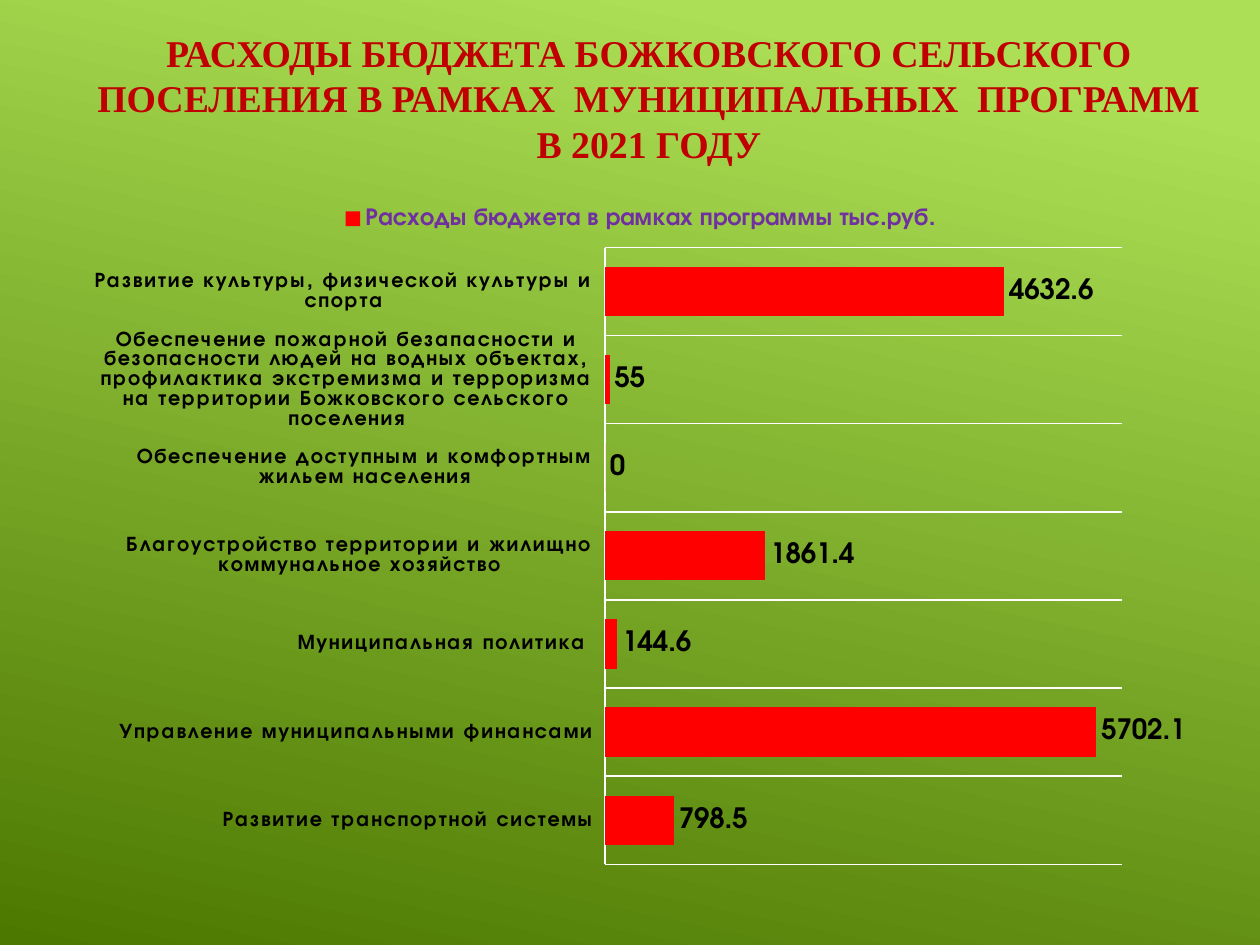
from lxml import etree
from pptx import Presentation
from pptx.chart.data import CategoryChartData
from pptx.dml.color import RGBColor
from pptx.enum.chart import (
    XL_CHART_TYPE as ChartType,
    XL_LABEL_POSITION as LabelPos,
    XL_LEGEND_POSITION as LegendPos,
    XL_TICK_LABEL_POSITION as TickLabelPos,
    XL_TICK_MARK as TickMark,
)
from pptx.enum.text import MSO_ANCHOR, MSO_AUTO_SIZE, PP_ALIGN
from pptx.oxml.ns import qn
from pptx.util import Inches, Pt

COLORS = {
    "light": "ACDF55", "dark": "4C7800", "title": "C00000", "bar": "FF0000",
    "legend": "7030A0", "text": "000000", "line": "FFFFFF",
}
TITLE_FONT = "Times New Roman"
CHART_FONT = "TeX Gyre Adventor"

TITLE = ("РАСХОДЫ БЮДЖЕТА БОЖКОВСКОГО СЕЛЬСКОГО ПОСЕЛЕНИЯ "
         "В РАМКАХ  МУНИЦИПАЛЬНЫХ  ПРОГРАММ В 2021 ГОДУ")
SERIES = "Расходы бюджета в рамках программы тыс.руб."
EXPENSES = {
    "Развитие транспортной системы": 798.5,
    "Управление муниципальными финансами": 5702.1,
    "Муниципальная политика ": 144.6,
    "Благоустройство территории и жилищно коммунальное хозяйство": 1861.4,
    "Обеспечение доступным и комфортным жильем населения": 0,
    "Обеспечение пожарной безапасности и безопасности людей на водных "
    "объектах, профилактика экстремизма и терроризма на территории "
    "Божковского сельского поселения": 55,
    "Развитие культуры, физической культуры и спорта": 4632.6,
}


def rgb(name):
    return RGBColor.from_string(COLORS[name])


class SlideBuilder:
    def __init__(self, prs):
        self.s = prs.slides.add_slide(prs.slide_layouts[5])

    def style(self, font, size, color, name=CHART_FONT, bold=True):
        font.name, font.size, font.bold = name, Pt(size), bold
        font.color.rgb = rgb(color)

    def line(self, fmt):
        fmt.line.color.rgb = rgb("line")
        fmt.line.width = Pt(0.75)

    def background(self, angle):
        fill = self.s.background.fill
        fill.gradient()
        fill.gradient_angle = 360 - angle
        for stop, pos, color in zip(fill.gradient_stops, (0.1, 1), ("light", "dark")):
            stop.position = pos
            stop.color.rgb = rgb(color)

    def title(self, text, x, y, w, h):
        sp = self.s.shapes.title
        sp.left, sp.top, sp.width, sp.height = map(Inches, (x, y, w, h))
        tf = sp.text_frame
        tf.word_wrap, tf.auto_size = True, MSO_AUTO_SIZE.NONE
        tf.vertical_anchor = MSO_ANCHOR.MIDDLE
        p = tf.paragraphs[0]
        p.text, p.alignment = text, PP_ALIGN.CENTER
        self.style(p.font, 21.6, "title", TITLE_FONT)

    def bar_chart(self, name, values, x, y, w, h):
        data = CategoryChartData()
        data.categories = list(values)
        data.add_series(name, list(values.values()))
        chart = self.s.shapes.add_chart(
            ChartType.BAR_CLUSTERED, *map(Inches, (x, y, w, h)), data).chart
        self.style(chart.font, 10, "line", bold=False)
        chart.has_title = False

        # Legend
        chart.has_legend = True
        chart.legend.position = LegendPos.TOP
        chart.legend.include_in_layout = False
        self.style(chart.legend.font, 14, "legend")

        # Axes
        axis = chart.category_axis
        axis.major_tick_mark = axis.minor_tick_mark = TickMark.NONE
        axis.tick_label_position = TickLabelPos.LOW
        axis.has_major_gridlines = True
        self.line(axis.format)
        self.line(axis.major_gridlines.format)
        self.style(axis.tick_labels.font, 12, "text")
        for props in axis._element.iter(qn("a:defRPr")):
            props.set("spc", "120")
        scale = chart.value_axis
        scale.minimum_scale, scale.maximum_scale = 0, 6000
        scale.has_major_gridlines = False
        scale.visible = False

        # Bars and values
        plot = chart.plots[0]
        plot.gap_width, plot.vary_by_categories = 79, False
        bars = plot.series[0]
        bars.format.fill.solid()
        bars.format.fill.fore_color.rgb = rgb("bar")
        labels = bars.data_labels
        labels.show_value = True
        labels.position = LabelPos.OUTSIDE_END
        self.style(labels.font, 16, "text")
        self.plot_area(chart, x=0.467, y=0.08, w=0.478, h=0.898)

    def plot_area(self, chart, **box):
        area = chart._chartSpace.chart.plotArea
        for old in area.findall(qn("c:layout")):
            area.remove(old)
        layout = etree.Element(qn("c:layout"))
        manual = etree.SubElement(layout, qn("c:manualLayout"))
        settings = {"layoutTarget": "inner", "xMode": "edge", "yMode": "edge", **box}
        for tag, val in settings.items():
            etree.SubElement(manual, qn(f"c:{tag}")).set("val", str(val))
        area.insert(0, layout)


def main():
    prs = Presentation()
    prs.slide_width, prs.slide_height = Inches(10), Inches(7.5)
    slide = SlideBuilder(prs)
    slide.background(102)
    slide.title(TITLE, 0.58, 0.33, 9.14, 0.89)
    slide.bar_chart(SERIES, EXPENSES, 0.75, 1.53, 8.66, 5.45)
    prs.save("out.pptx")


if __name__ == "__main__":
    main()
